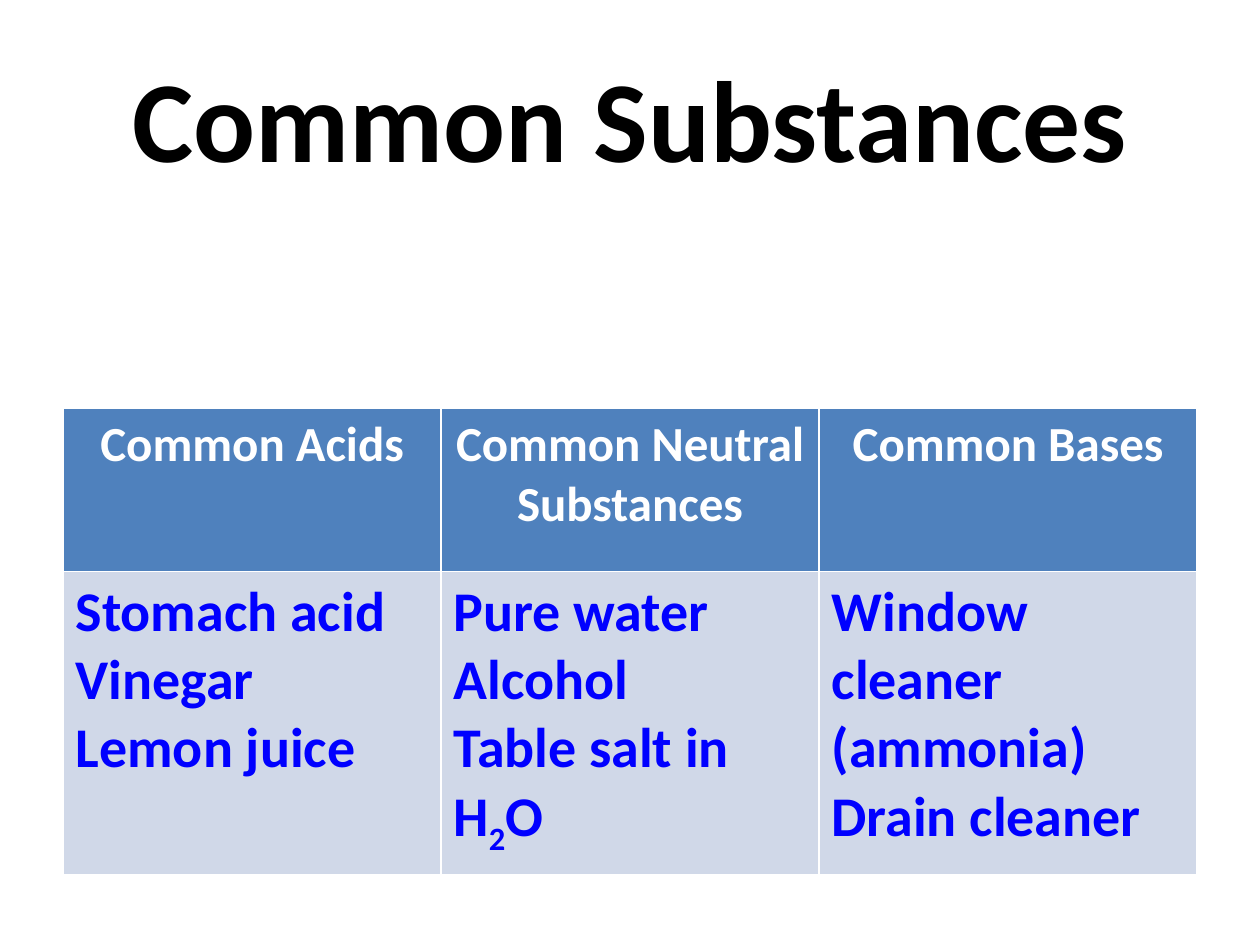
from pptx import Presentation
from pptx.dml.color import RGBColor
from pptx.enum.text import MSO_ANCHOR, PP_ALIGN
from pptx.util import Inches, Pt

LEFT, CENTER = PP_ALIGN.LEFT, PP_ALIGN.CENTER
MIDDLE = MSO_ANCHOR.MIDDLE
WIDE, HIGH = 10, 7.5
FACE = "Calibri"

# Each column: heading, then its lines; a tuple is (text, subscript, text)
COLS = [
    ("Common Acids", ["Stomach acid", "Vinegar", "Lemon juice"]),
    ("Common Neutral Substances",
     ["Pure water", "Alcohol", ("Table salt in H", "2", "O")]),
    ("Common Bases", ["Window cleaner (ammonia)", "Drain cleaner"]),
]


def color(code):
    return RGBColor.from_string(code)


def write(frame, lines, size, ink, align):
    for i, line in enumerate(lines):
        para = frame.paragraphs[0] if i == 0 else frame.add_paragraph()
        para.alignment = align
        font = para.font
        font.name, font.size, font.bold = FACE, Pt(size), True
        font.color.rgb = color(ink)
        parts = (line,) if isinstance(line, str) else line
        for j, part in enumerate(parts):
            run = para.add_run()
            run.text = part
            if j % 2:
                run._r.get_or_add_rPr().set("baseline", "-25000")


def add_title(slide, box, text):
    title = slide.shapes.title
    title.left, title.top, title.width, title.height = map(Inches, box)
    title.text_frame.vertical_anchor = MIDDLE
    write(title.text_frame, [text], 66, "000000", CENTER)


def add_grid(slide, box, cols, head):
    left, top, width, height = map(Inches, box)
    table = slide.shapes.add_table(2, len(cols), left, top, width, height).table
    table.horz_banding = False
    for row, share in zip(table.rows, (head, 1 - head)):
        row.height = int(height * share)
    for i, (name, lines) in enumerate(cols):
        table.columns[i].width = width // len(cols)
        looks = [([name], 28, "FFFFFF", CENTER, "4F81BD"),
                 (lines, 32, "0000FF", LEFT, "D0D8E8")]
        for j, (words, size, ink, align, fill) in enumerate(looks):
            cell = table.cell(j, i)
            cell.fill.solid()
            cell.fill.fore_color.rgb = color(fill)
            write(cell.text_frame, words, size, ink, align)


def main():
    deck = Presentation()
    deck.slide_width, deck.slide_height = Inches(WIDE), Inches(HIGH)
    slide = deck.slides.add_slide(deck.slide_layouts[5])
    side = WIDE * 0.05
    span = WIDE - 2 * side
    # Title band, then the table of substances
    add_title(slide, (side, HIGH * 0.04, span, 1.25), "Common Substances")
    add_grid(slide, (side, 3.24, span, 3.7), COLS, 0.35)
    deck.save("out.pptx")


if __name__ == "__main__":
    main()
